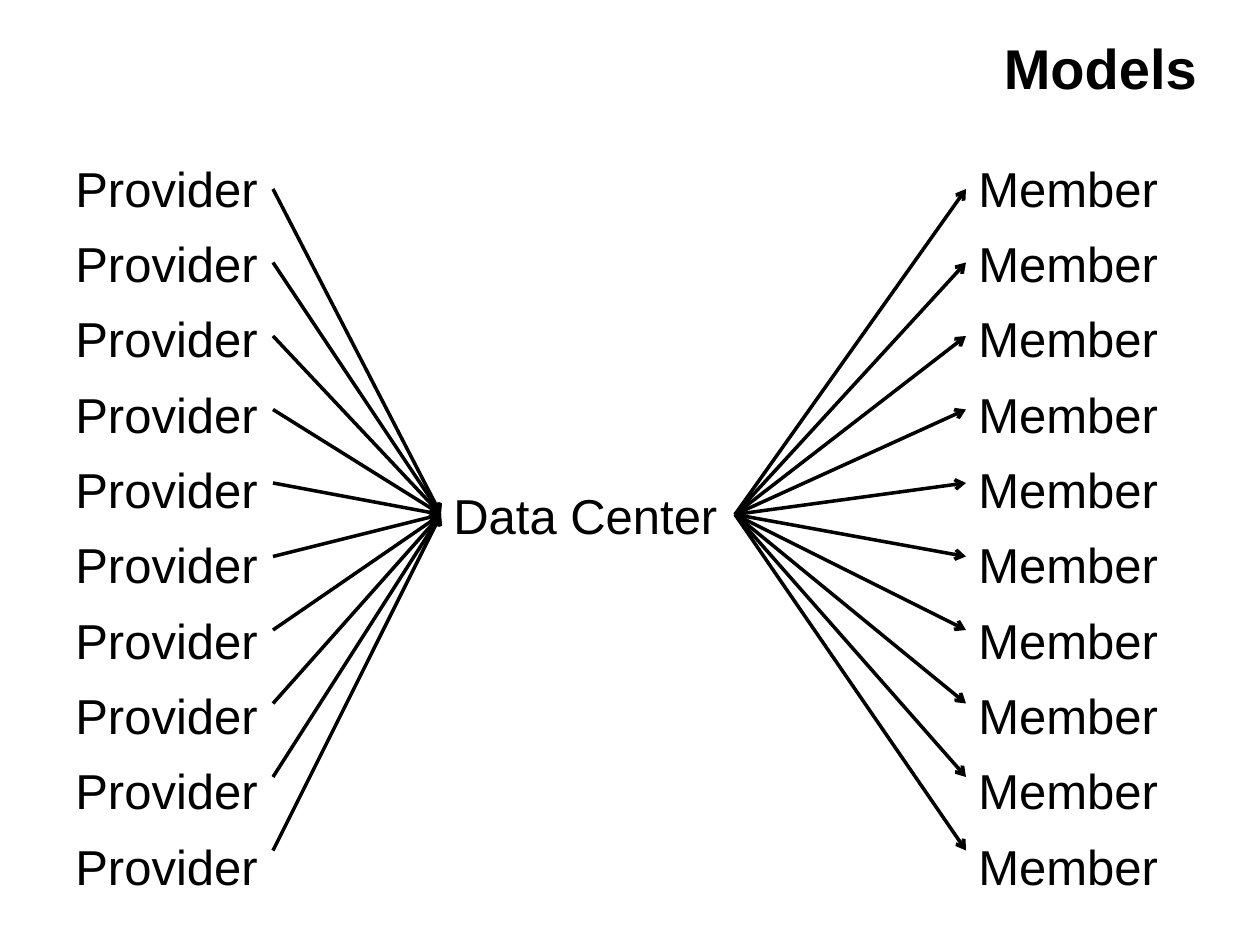
from dataclasses import dataclass

from lxml.etree import SubElement
from pptx import Presentation
from pptx.dml.color import RGBColor
from pptx.enum.shapes import MSO_CONNECTOR
from pptx.enum.text import MSO_ANCHOR, PP_ALIGN
from pptx.oxml.ns import qn
from pptx.util import Inches, Pt


@dataclass(frozen=True)
class Theme:
    font: str = "Arial"
    ink: RGBColor = RGBColor(0, 0, 0)
    paper: RGBColor = RGBColor(255, 255, 255)
    title_size: float = 32
    body_size: float = 28
    paragraph_gap: float = 9.4
    line_width: float = 2


class FlowSlide:
    """Draws text and arrows on a slide grid of 60 columns by 45 rows."""

    def __init__(self, presentation, theme):
        self.theme = theme
        self.column = presentation.slide_width / 60
        self.row = presentation.slide_height / 45
        self.slide = presentation.slides.add_slide(presentation.slide_layouts[6])
        self.slide.background.fill.solid()
        self.slide.background.fill.fore_color.rgb = theme.paper

    def point(self, column, row):
        return round(column * self.column), round(row * self.row)

    def text(self, lines, place, size, bold=False, align=PP_ALIGN.LEFT,
             anchor=MSO_ANCHOR.TOP, side_inset=0.1, top_inset=0.05):
        left, top, width, height = place
        box = self.slide.shapes.add_textbox(
            *self.point(left, top), *self.point(width, height))
        frame = box.text_frame
        frame.word_wrap = True
        frame.vertical_anchor = anchor
        frame.margin_left = frame.margin_right = Inches(side_inset)
        frame.margin_top = Inches(top_inset)
        frame.text = "\n".join(lines)
        for index, paragraph in enumerate(frame.paragraphs):
            paragraph.alignment = align
            paragraph.space_before = Pt(self.theme.paragraph_gap if index else 0)
            for run in paragraph.runs:
                run.font.name = self.theme.font
                run.font.size = Pt(size)
                run.font.bold = bold
                run.font.color.rgb = self.theme.ink
        return box

    def arrow(self, start, end):
        connector = self.slide.shapes.add_connector(
            MSO_CONNECTOR.STRAIGHT, *self.point(*start), *self.point(*end))
        connector.line.color.rgb = self.theme.ink
        connector.line.width = Pt(self.theme.line_width)
        SubElement(connector.line._get_or_add_ln(), qn("a:tailEnd"), type="arrow")
        SubElement(connector._element.spPr, qn("a:effectLst"))
        return connector


def main():
    presentation = Presentation()
    presentation.slide_width, presentation.slide_height = Inches(10), Inches(7.5)
    theme = Theme()
    flow = FlowSlide(presentation, theme)
    count, top, height, middle = 10, 7, 35, 24.5

    flow.text(["Models"], (30, 1.3, 27, 5.2), theme.title_size, bold=True,
              align=PP_ALIGN.RIGHT, side_inset=0)
    for label, left in (("Provider", 3), ("Member", 46)):
        flow.text([label] * count, (left, top, 11, height), theme.body_size,
                  top_inset=0.09)
    center = flow.text(["Data Center"], (21, top, 14, height), theme.body_size,
                       anchor=MSO_ANCHOR.MIDDLE)

    for index in range(count):
        row = 9 + index * height / count
        flow.arrow((13, row), (21, middle)).end_connect(center, 1)
        flow.arrow((35, middle), (46, row)).begin_connect(center, 3)

    presentation.save("out.pptx")


if __name__ == "__main__":
    main()
